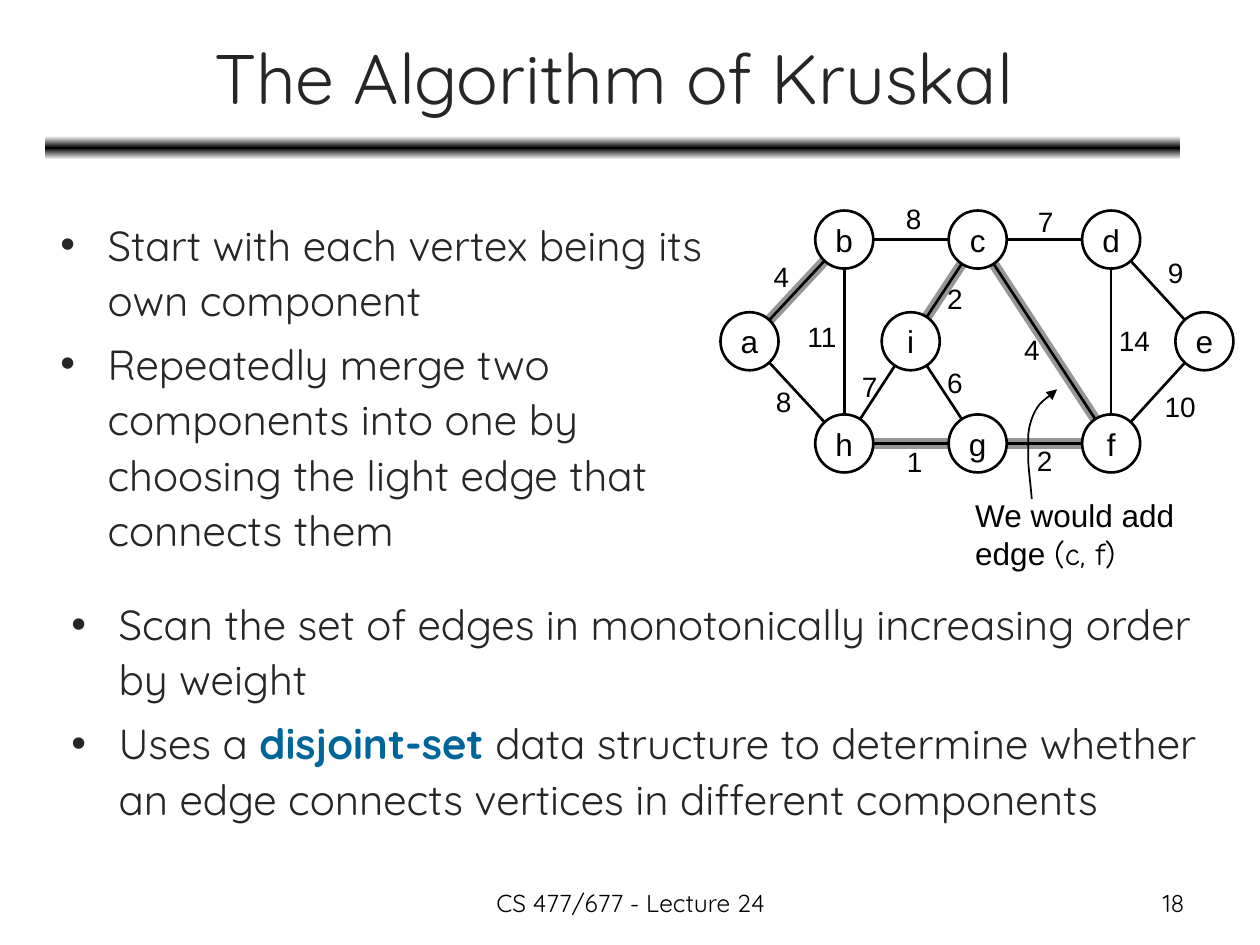
from copy import deepcopy
from math import hypot

from lxml import etree
from pptx import Presentation
from pptx.dml.color import RGBColor
from pptx.enum import shapes, text
from pptx.oxml import ns
from pptx.util import Cm, Pt

BLACK = RGBColor(0x00, 0x00, 0x00)
WHITE = RGBColor(0xFF, 0xFF, 0xFF)
DARK = RGBColor(0x26, 0x26, 0x26)
GREY = RGBColor(0x96, 0x96, 0x96)
BLUE = RGBColor(0x00, 0x66, 0x99)

# Graph: vertex centres, then edges with weight and label centre (cm)
NODE_SIZE = 1.17
LEFT_COL, MID_COL, RIGHT_COL = 17.02, 19.71, 22.4
TOP_ROW, MID_ROW, LOW_ROW = 4.83, 6.88, 8.94
VERTICES = {
    "a": (15.11, MID_ROW), "b": (LEFT_COL, TOP_ROW), "c": (MID_COL, TOP_ROW),
    "d": (RIGHT_COL, TOP_ROW), "e": (24.28, MID_ROW), "h": (LEFT_COL, LOW_ROW),
    "g": (MID_COL, LOW_ROW), "f": (RIGHT_COL, LOW_ROW), "i": (18.36, MID_ROW),
}
EDGES = {
    "ab": (4, 15.75, 5.58), "bc": (8, 18.42, 4.41), "cd": (7, 21.08, 4.46),
    "ah": (8, 15.8, 8.09), "bh": (11, 16.57, 6.79), "hg": (1, 18.44, 9.31),
    "gf": (2, 21.06, 9.28), "hi": (7, 17.53, 7.79), "ic": (2, 19.25, 6.03),
    "cf": (4, 20.8, 7.05), "df": (14, 22.87, 6.87), "de": (9, 23.7, 5.5),
    "ef": (10, 23.79, 8.19), "ig": (6, 19.25, 7.71),
}
CHOSEN = ("cf", "ab", "hg", "gf", "ic")

# Arrow from the remark to edge (c, f), as Bezier segments (cm)
ARROW_START = (20.8, 10.06)
ARROW_CURVES = (
    ((20.78, 9.8), (20.75, 9.58), (20.73, 9.32)),
    ((20.73, 9.14), (20.73, 8.97), (20.73, 8.76)),
    ((20.75, 8.53), (20.85, 8.23), (21.03, 8.08)),
    ((21.13, 8.0), (21.2, 7.95), (21.31, 7.85)),
)


def bezier(start, curves, steps=8):
    """Points along a chain of cubic Bezier segments, without the start."""
    points = []
    for ctrl1, ctrl2, end in curves:
        for step in range(1, steps + 1):
            t = step / steps
            weights = ((1 - t) ** 3, 3 * t * (1 - t) ** 2, 3 * t * t * (1 - t), t ** 3)
            corners = (start, ctrl1, ctrl2, end)
            points.append(tuple(sum(w * p[axis] for w, p in zip(weights, corners))
                                for axis in (0, 1)))
        start = end
    return points


class Board:
    """Slide under construction, with its style."""

    font, graph_font = "Quicksand", "Arial"

    def __init__(self, slide):
        self.shapes = slide.shapes

    def style(self, font, size, color, name):
        font.size, font.name = Pt(size), name
        font.color.rgb = color

    def text(self, left, top, width, height, lines, size, color=BLACK, name=None,
             align=text.PP_ALIGN.LEFT, anchor=text.MSO_ANCHOR.TOP, wrap=True, bullet=False):
        """Text box; each line is a list of (text, font changes) runs."""
        box = self.shapes.add_textbox(Cm(left), Cm(top), Cm(width), Cm(height))
        frame = box.text_frame
        frame.word_wrap, frame.vertical_anchor = wrap, anchor
        for number, runs in enumerate(lines):
            paragraph = frame.add_paragraph() if number else frame.paragraphs[0]
            paragraph.alignment = align
            if bullet:
                self.bullet(paragraph, size)
            self.style(paragraph.font, size, color, name or self.font)
            for words, changes in runs:
                run = paragraph.add_run()
                run.text = words
                if "name" in changes:
                    run.font.name = changes["name"]
                if "color" in changes:
                    run.font.color.rgb = changes["color"]
                    run.font.bold = True

    def bullet(self, paragraph, size):
        props = paragraph._p.get_or_add_pPr()
        props.set("marL", str(Cm(0.95)))
        props.set("indent", str(-Cm(0.95)))
        etree.SubElement(props, ns.qn("a:buFont")).set("typeface", "Arial")
        etree.SubElement(props, ns.qn("a:buChar")).set("char", "•")
        paragraph.line_spacing = 1.1
        paragraph.space_before = Pt(size * 0.2)

    def gradient_bar(self, left, top, width, height):
        bar = self.shapes.add_shape(shapes.MSO_SHAPE.ROUNDED_RECTANGLE,
                                    Cm(left), Cm(top), Cm(width), Cm(height))
        bar.shadow.inherit = False
        bar.line.fill.background()
        bar.fill.gradient()
        bar.fill.gradient_angle = 90
        # python-pptx keeps two stops, so a middle one is added
        stops = bar._element.spPr.find(".//" + ns.qn("a:gsLst"))
        stops.insert(1, deepcopy(stops[0]))
        for stop, place, color in zip(bar.fill.gradient_stops, (0, 0.5, 1),
                                      (WHITE, BLACK, WHITE)):
            stop.position, stop.color.rgb = place, color

    def edge(self, ends, color, width):
        """Line between two vertices, from rim to rim."""
        (x1, y1), (x2, y2) = (VERTICES[end] for end in ends)
        part = NODE_SIZE / 2 / hypot(x2 - x1, y2 - y1)
        dx, dy = (x2 - x1) * part, (y2 - y1) * part
        line = self.shapes.add_connector(shapes.MSO_CONNECTOR.STRAIGHT, Cm(x1 + dx),
                                         Cm(y1 + dy), Cm(x2 - dx), Cm(y2 - dy))
        line.line.color.rgb, line.line.width = color, Pt(width)
        etree.SubElement(line._element.spPr, ns.qn("a:effectLst"))

    def vertex(self, letter, x, y):
        node = self.shapes.add_shape(shapes.MSO_SHAPE.OVAL, Cm(x - NODE_SIZE / 2),
                                     Cm(y - NODE_SIZE / 2), Cm(NODE_SIZE), Cm(NODE_SIZE))
        node.shadow.inherit = False
        node.fill.background()
        node.line.color.rgb, node.line.width = BLACK, Pt(1.5)
        frame = node.text_frame
        frame.word_wrap, frame.vertical_anchor = False, text.MSO_ANCHOR.MIDDLE
        paragraph = frame.paragraphs[0]
        paragraph.text, paragraph.alignment = letter, text.PP_ALIGN.CENTER
        self.style(paragraph.font, 18, BLACK, self.graph_font)

    def weight(self, value, x, y):
        width, height = 0.5 + 0.32 * len(str(value)), 0.94
        self.text(x - width / 2, y - height / 2, width, height, [[(str(value), {})]], 16,
                  name=self.graph_font, align=text.PP_ALIGN.CENTER, wrap=False)

    def curved_arrow(self, start, curves):
        builder = self.shapes.build_freeform(Cm(start[0]), Cm(start[1]))
        builder.add_line_segments([(Cm(x), Cm(y)) for x, y in bezier(start, curves)],
                                  close=False)
        arrow = builder.convert_to_shape()
        arrow.shadow.inherit = False
        arrow.fill.background()
        arrow.line.color.rgb, arrow.line.width = BLACK, Pt(1)
        line = arrow._element.spPr.find(ns.qn("a:ln"))
        etree.SubElement(line, ns.qn("a:tailEnd")).set("type", "triangle")


def main():
    deck = Presentation()
    deck.slide_width, deck.slide_height = Cm(25.4), Cm(19.05)
    board = Board(deck.slides.add_slide(deck.slide_layouts[6]))
    center, right = text.PP_ALIGN.CENTER, text.PP_ALIGN.RIGHT

    # Title, rule and footer
    board.gradient_bar(0.91, 2.74, 22.89, 0.48)
    board.text(0.94, 0.28, 22.86, 2.51, [[("The Algorithm of Kruskal", {})]], 40, DARK,
               align=center, anchor=text.MSO_ANCHOR.MIDDLE)
    board.text(8.69, 17.78, 8.05, 0.89, [[("CS 477/677 - Lecture 24", {})]], 14, align=center)
    board.text(18.21, 17.78, 5.92, 0.89, [[("18", {})]], 14, align=right)

    # Graph, with the chosen edges underlaid in grey
    for ends in CHOSEN:
        board.edge(ends, GREY, 6)
    for letter, (x, y) in VERTICES.items():
        board.vertex(letter, x, y)
    for ends, (value, x, y) in EDGES.items():
        board.edge(ends, BLACK, 1.5)
        board.weight(value, x, y)

    # Remark on the next edge
    board.text(19.41, 9.88, 4.52, 1.78,
               [[("We would add", {})], [("edge ", {}), ("(c, f)", {"name": "Comic Neue"})]],
               18, name=board.graph_font, wrap=False)
    board.curved_arrow(ARROW_START, ARROW_CURVES)

    # Explanation
    board.text(0.97, 4.19, 13.94, 9.65, [
        [("Start with each vertex being its own component", {})],
        [("Repeatedly merge two components into one by choosing the light edge "
          "that connects them", {})],
    ], 24, DARK, bullet=True)
    board.text(1.19, 11.84, 24.03, 5.41, [
        [("Scan the set of edges in monotonically increasing order by weight", {})],
        [("Uses a ", {}), ("disjoint-set ", {"color": BLUE}),
         ("data structure to determine whether an edge connects vertices in "
          "different components", {})],
    ], 24, DARK, bullet=True)

    deck.save("out.pptx")


if __name__ == "__main__":
    main()
